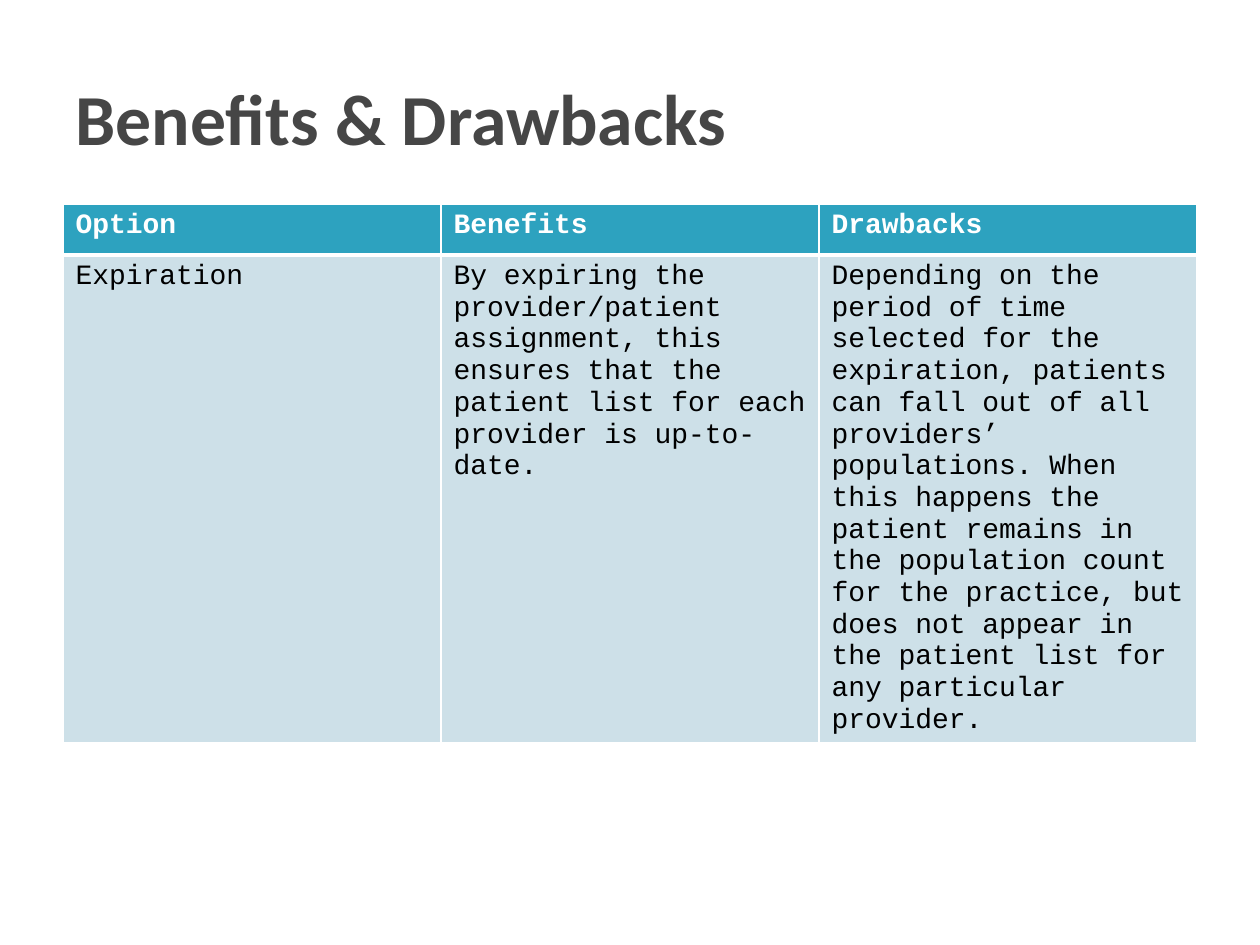
"""Build the Benefits & Drawbacks slide with its comparison table."""
import dataclasses

import lxml.etree
import pptx
import pptx.dml.color
import pptx.enum.text
import pptx.oxml.ns
import pptx.util

EMU_PER_PX = 914400 / 126
ROWS = [
    ["Option", "Benefits", "Drawbacks"],
    [
        "Expiration",
        "By expiring the provider/patient assignment, this ensures that the "
        "patient list for each provider is up-to-date.",
        "Depending on the period of time selected for the expiration, patients "
        "can fall out of all providers’ populations. When this happens the "
        "patient remains in the population count for the practice, but does not "
        "appear in the patient list for any particular provider.",
    ],
]


@dataclasses.dataclass(frozen=True)
class Theme:
    title_font: str = "Calibri"
    table_font: str = "Courier New"
    title_size: int = 41
    table_size: int = 16
    title_color: str = "464646"
    header_text: str = "FFFFFF"
    body_text: str = "000000"
    header_fill: str = "2DA2BF"
    body_fill: str = "CDE0E8"
    border: str = "FFFFFF"
    thin_line: int = 1
    thick_line: int = 3


THEME = Theme()


def px(length):
    return pptx.util.Emu(round(length * EMU_PER_PX))


def rgb(color):
    return pptx.dml.color.RGBColor.from_string(color)


def write_text(frame, text, *, font, size, color, bold=False):
    para = frame.paragraphs[0]
    para.alignment = pptx.enum.text.PP_ALIGN.LEFT
    span = para.add_run()
    span.text = text
    span.font.name = font
    span.font.size = pptx.util.Pt(size)
    span.font.bold = bold
    span.font.color.rgb = rgb(color)


def set_borders(cell, **widths):
    properties = cell._tc.get_or_add_tcPr()
    qn = pptx.oxml.ns.qn
    for index, (side, width) in enumerate(widths.items()):
        line = lxml.etree.Element(qn(f"a:ln{side}"), w=str(pptx.util.Pt(width)))
        fill = lxml.etree.SubElement(line, qn("a:solidFill"))
        lxml.etree.SubElement(fill, qn("a:srgbClr"), val=THEME.border)
        properties.insert(index, line)


def add_title(slide, text, left, top, width, height):
    title = slide.shapes.title
    title.left, title.top, title.width, title.height = map(px, (left, top, width, height))
    frame = title.text_frame
    frame.auto_size = pptx.enum.text.MSO_AUTO_SIZE.NONE
    frame.vertical_anchor = pptx.enum.text.MSO_ANCHOR.MIDDLE
    write_text(frame, text, font=THEME.title_font, size=THEME.title_size,
               color=THEME.title_color, bold=True)


def fill_cell(cell, text, is_header):
    cell.fill.solid()
    cell.fill.fore_color.rgb = rgb(THEME.header_fill if is_header else THEME.body_fill)
    write_text(cell.text_frame, text, font=THEME.table_font, size=THEME.table_size,
               color=THEME.header_text if is_header else THEME.body_text, bold=is_header)
    thin, thick = THEME.thin_line, THEME.thick_line
    set_borders(cell, L=thin, R=thin, T=thin if is_header else thick,
                B=thick if is_header else thin)


def add_comparison(slide, rows, left, top, width, heights):
    frame = slide.shapes.add_table(len(rows), len(rows[0]), px(left), px(top),
                                   px(width), px(sum(heights)))
    table = frame.table
    table.horz_banding = False
    for row_index, (texts, height) in enumerate(zip(rows, heights)):
        table.rows[row_index].height = px(height)
        for column_index, text in enumerate(texts):
            fill_cell(table.cell(row_index, column_index), text, row_index == 0)


def main():
    deck = pptx.Presentation()
    deck.slide_width, deck.slide_height = px(1260), px(945)
    slide = deck.slides.add_slide(deck.slide_layouts.get_by_name("Title Only"))
    add_title(slide, "Benefits & Drawbacks", 63, 38, 1134, 158)
    add_comparison(slide, ROWS, 63, 204, 1134, [51, 488])
    deck.save("out.pptx")


if __name__ == "__main__":
    main()
